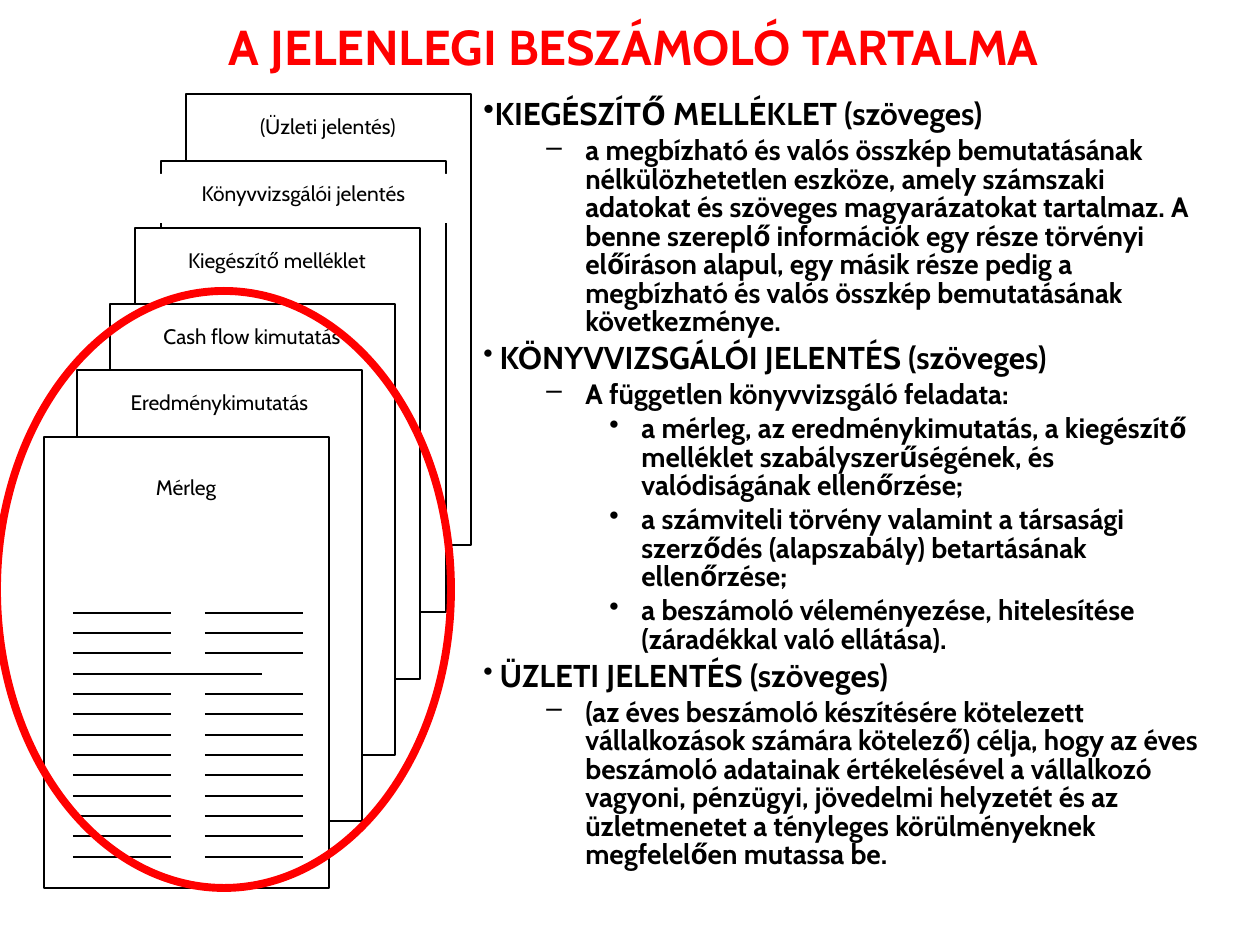
from lxml.etree import SubElement
from pptx import Presentation
from pptx.dml.color import RGBColor
from pptx.enum.shapes import MSO_CONNECTOR as Connector, MSO_SHAPE as Shape
from pptx.enum.text import MSO_ANCHOR as Anchor, PP_ALIGN as Align
from pptx.oxml.ns import qn
from pptx.util import Emu, Pt

BLACK, WHITE, RED = "000000", "FFFFFF", "FF0000"


def px(length):
    """Turn pixels, 126 to the inch, into EMU."""
    return Emu(round(length * 914400 / 126))


def color(value):
    return RGBColor.from_string(value)


class SlideBuilder:
    font = "Cabin"
    thin = 0.75
    # level: (bullet, left margin, first-line indent)
    bullets = {0: ("•", 0, 0), 1: ("–", 102, -39), 2: ("•", 158, -32)}

    def __init__(self, page):
        self.page = page
        self.shapes = page.shapes

    def start_group(self):
        self.shapes = self.page.shapes.add_group_shape().shapes

    def end_group(self):
        self.shapes = self.page.shapes

    def span(self, para, text, size, ink=BLACK, bold=False):
        run = para.add_run()
        run.text = text
        run.font.name = self.font
        run.font.size = Pt(size)
        run.font.bold = bold
        run.font.color.rgb = color(ink)

    def text_box(self, left, top, width, height, anchor=Anchor.TOP):
        box = self.shapes.add_textbox(px(left), px(top), px(width), px(height))
        box.text_frame.word_wrap = True
        box.text_frame.vertical_anchor = anchor
        return box.text_frame

    def bullet(self, para, level, spans):
        """Fill a bulleted paragraph with (text, size) spans."""
        mark, margin, indent = self.bullets[level]
        para.level = level
        para.line_spacing = 0.85
        para.space_before = Pt(0.2 * spans[-1][1])
        props = para._p.get_or_add_pPr()
        props.set("marL", str(px(margin)))
        props.set("indent", str(px(indent)))
        SubElement(props, qn("a:buChar")).set("char", mark)
        for text, size in spans:
            self.span(para, text, size, bold=True)

    def shape(self, kind, left, top, width, height, fill=None, line=None, weight=thin):
        shape = self.shapes.add_shape(kind, px(left), px(top), px(width), px(height))
        shape.shadow.inherit = False
        if fill:
            shape.fill.solid()
            shape.fill.fore_color.rgb = color(fill)
        else:
            shape.fill.background()
        if line:
            shape.line.color.rgb = color(line)
            shape.line.width = Pt(weight)
        else:
            shape.line.fill.background()
        return shape

    def label(self, text, left, top, width, height):
        frame = self.shape(Shape.RECTANGLE, left, top, width, height, WHITE).text_frame
        frame.word_wrap = False
        frame.vertical_anchor = Anchor.TOP
        para = frame.paragraphs[0]
        para.alignment = Align.CENTER
        self.span(para, text, 12)

    def rule(self, left, top, width):
        """Draw a thin horizontal line."""
        line = self.shapes.add_connector(
            Connector.STRAIGHT, px(left), px(top), px(left + width), px(top))
        line.line.color.rgb = color(BLACK)
        line.line.width = Pt(self.thin)
        SubElement(line._element.spPr, qn("a:effectLst"))


SHEET_WIDTH, SHEET_HEIGHT = 285, 451
# label, sheet left, sheet top, label width, label offset
SHEETS = [
    ("(Üzleti jelentés)", 186, 94, 212, 13),
    ("Könyvvizsgálói jelentés", 161, 161, 295, 13),
    ("Kiegészítő melléklet", 135, 228, 258, 13),
    ("Cash flow kimutatás", 110, 304, 260, 13),
    ("Eredménykimutatás", 77, 370, 257, 13),
    ("Mérleg", 44, 437, 110, 31),
]
ROWS, TOTAL_ROW = 13, 3

OUTLINE = [
    (0, [("KIEGÉSZÍTŐ MELLÉKLET (szöveges)", 18)]),
    (1, [("a megbízható és valós összkép bemutatásának nélkülözhetetlen eszköze, "
          "amely számszaki adatokat és szöveges magyarázatokat tartalmaz. A benne "
          "szereplő információk egy része törvényi előíráson alapul, egy másik "
          "része pedig a megbízható és valós összkép bemutatásának következménye.", 16)]),
    (0, [(" ", 16), ("KÖNYVVIZSGÁLÓI JELENTÉS (szöveges)", 18)]),
    (1, [("A független könyvvizsgáló feladata:", 16)]),
    (2, [("a mérleg, az eredménykimutatás, a kiegészítő melléklet "
          "szabályszerűségének, és valódiságának ellenőrzése;", 16)]),
    (2, [("a számviteli törvény valamint a társasági szerződés (alapszabály) "
          "betartásának ellenőrzése;", 16)]),
    (2, [("a beszámoló véleményezése, hitelesítése (záradékkal való ellátása).", 16)]),
    (0, [(" ", 16), ("ÜZLETI JELENTÉS (szöveges)", 18)]),
    (1, [("(az éves beszámoló készítésére kötelezett vállalkozások számára "
          "kötelező) célja, hogy az éves beszámoló adatainak értékelésével a "
          "vállalkozó vagyoni, pénzügyi, jövedelmi helyzetét és az üzletmenetet a "
          "tényleges körülményeknek megfelelően mutassa be.", 16)]),
]


def main():
    deck = Presentation()
    deck.slide_width, deck.slide_height = px(1260), px(945)
    builder = SlideBuilder(deck.slides.add_slide(deck.slide_layouts[6]))

    title = builder.text_box(98, -33, 1071, 158, Anchor.MIDDLE).paragraphs[0]
    title.alignment = Align.CENTER
    builder.span(title, "A JELENLEGI BESZÁMOLÓ TARTALMA", 28, RED, bold=True)

    body = builder.text_box(471, 94, 755, 851)
    for index, (level, spans) in enumerate(OUTLINE):
        para = body.add_paragraph() if index else body.paragraphs[0]
        builder.bullet(para, level, spans)

    builder.start_group()
    for text, left, top, width, offset in SHEETS:
        builder.shape(Shape.RECTANGLE, left, top, SHEET_WIDTH, SHEET_HEIGHT, WHITE, BLACK)
        builder.label(text, left + (SHEET_WIDTH - width) // 2, top + offset, width, 49)
    for row in range(ROWS):
        top = 613 + 244 * row // (ROWS - 1)
        builder.rule(73, top, 98)
        builder.rule(164 if row == TOTAL_ROW else 205, top, 98)
    builder.end_group()

    builder.shape(Shape.OVAL, -3, 291, 454, 597, line=RED, weight=4.5)
    deck.save("out.pptx")


if __name__ == "__main__":
    main()
